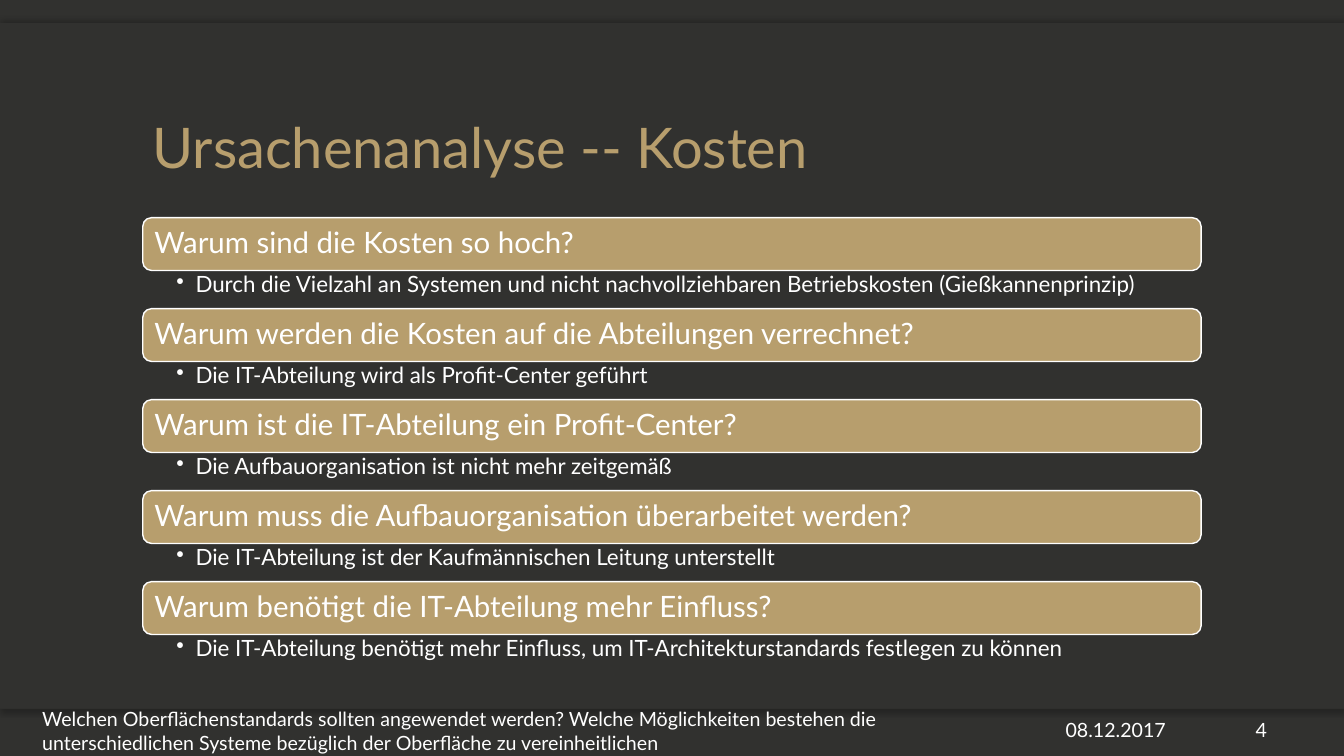
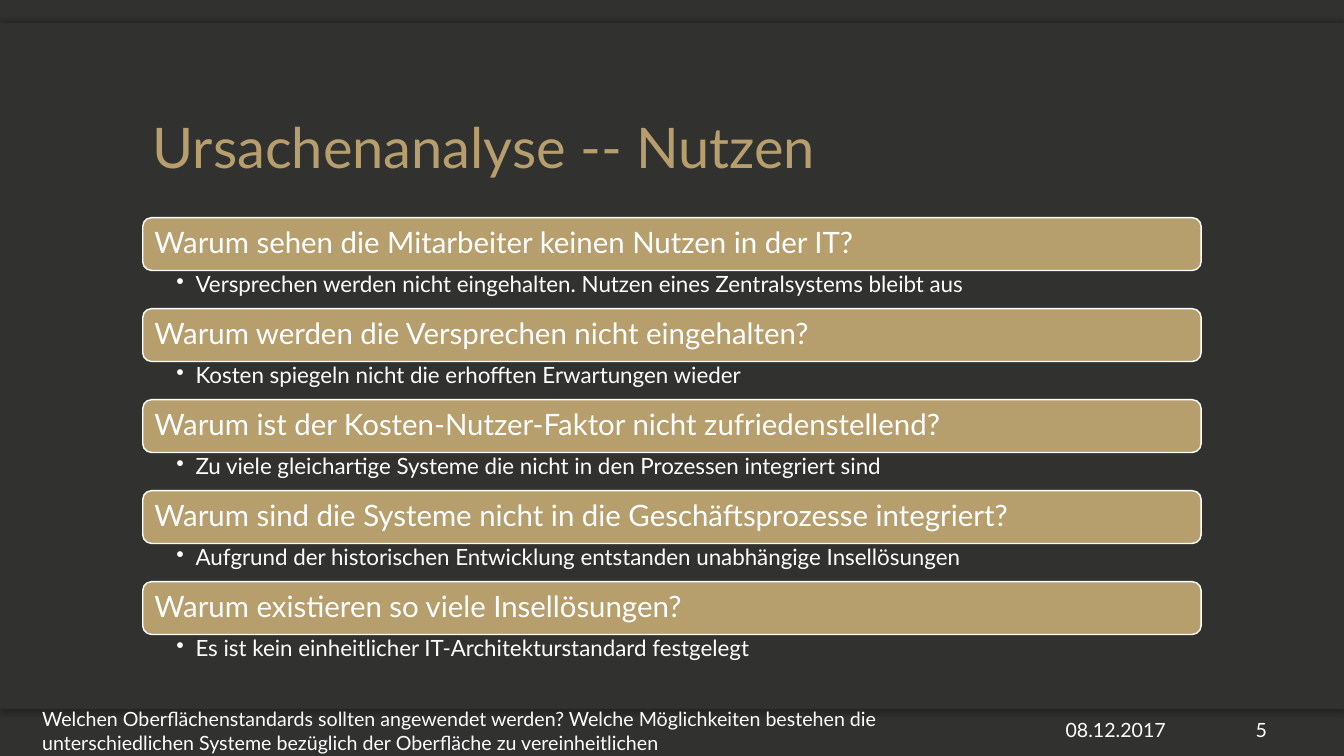
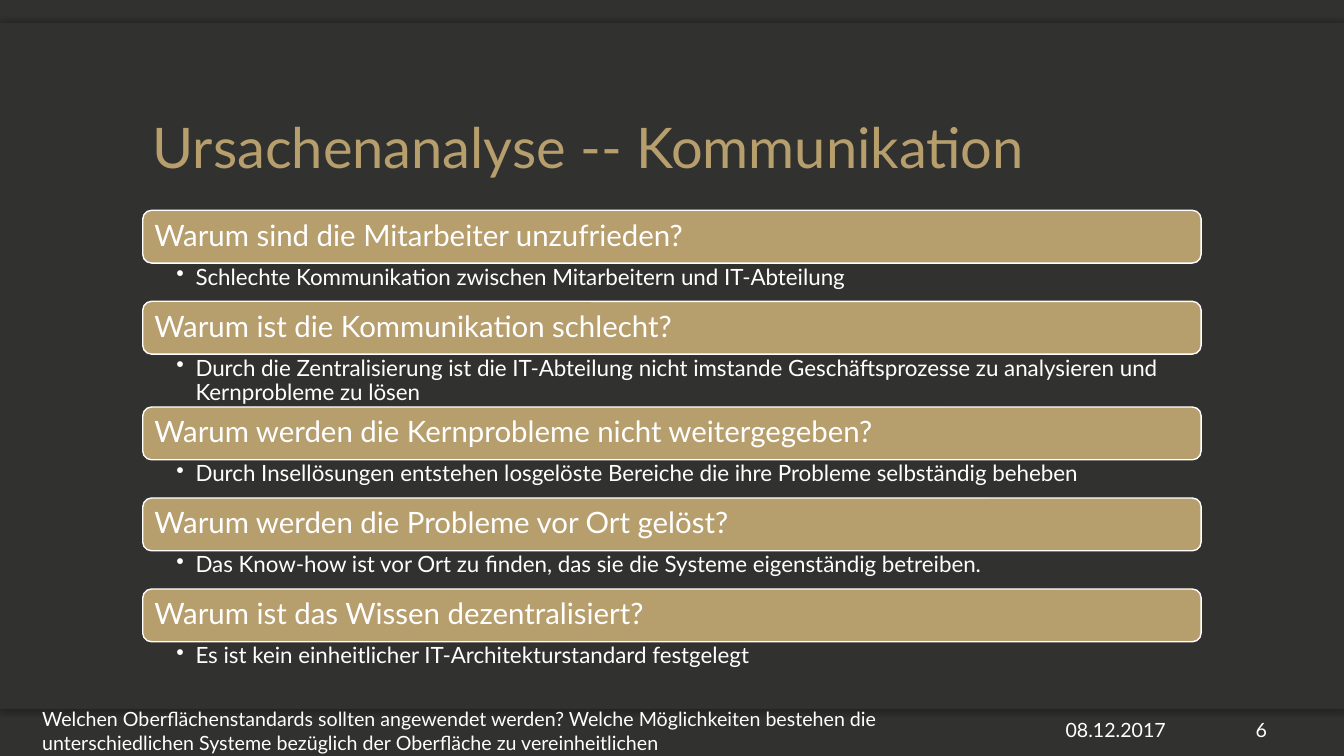
from lxml.etree import SubElement
from pptx import Presentation
from pptx.dml.color import RGBColor
from pptx.enum.shapes import MSO_SHAPE as SHAPE
from pptx.enum.text import MSO_ANCHOR as ANCHOR, PP_ALIGN as ALIGN
from pptx.oxml.ns import qn
from pptx.util import Pt

DARK, GOLD, WHITE = "31312F", "B79E6D", "FFFFFF"
FONT = "Lato"
WIDTH, HEIGHT = 960, 540
LEFT, CONTENT_W = 102, 756
LIST_MIDDLE = 318
QUESTION_H, ANSWER_H, TALL_ANSWER_H = 37.7, 27.3, 37.8
BULLET_INDENT = 13.7
DATE = "08.12.2017"
FOOTER = ("Welchen Oberflächenstandards sollten angewendet werden? Welche Möglichkeiten "
          "bestehen die unterschiedlichen Systeme bezüglich der Oberfläche zu vereinheitlichen")

SLIDES = [
    (4, "Ursachenanalyse -- Kosten", [
        ("Warum sind die Kosten so hoch?",
         "Durch die Vielzahl an Systemen und nicht nachvollziehbaren Betriebskosten (Gießkannenprinzip)"),
        ("Warum werden die Kosten auf die Abteilungen verrechnet?",
         "Die IT-Abteilung wird als Profit-Center geführt"),
        ("Warum ist die IT-Abteilung ein Profit-Center?",
         "Die Aufbauorganisation ist nicht mehr zeitgemäß"),
        ("Warum muss die Aufbauorganisation überarbeitet werden?",
         "Die IT-Abteilung ist der Kaufmännischen Leitung unterstellt"),
        ("Warum benötigt die IT-Abteilung mehr Einfluss?",
         "Die IT-Abteilung benötigt mehr Einfluss, um IT-Architekturstandards festlegen zu können"),
    ]),
    (5, "Ursachenanalyse -- Nutzen", [
        ("Warum sehen die Mitarbeiter keinen Nutzen in der IT?",
         "Versprechen werden nicht eingehalten. Nutzen eines Zentralsystems bleibt aus"),
        ("Warum werden die Versprechen nicht eingehalten?",
         "Kosten spiegeln nicht die erhofften Erwartungen wieder"),
        ("Warum ist der Kosten-Nutzer-Faktor nicht zufriedenstellend?",
         "Zu viele gleichartige Systeme die nicht in den Prozessen integriert sind"),
        ("Warum sind die Systeme nicht in die Geschäftsprozesse integriert?",
         "Aufgrund der historischen Entwicklung entstanden unabhängige Insellösungen"),
        ("Warum existieren so viele Insellösungen?",
         "Es ist kein einheitlicher IT-Architekturstandard festgelegt"),
    ]),
    (6, "Ursachenanalyse -- Kommunikation", [
        ("Warum sind die Mitarbeiter unzufrieden?",
         "Schlechte Kommunikation zwischen Mitarbeitern und IT-Abteilung"),
        ("Warum ist die Kommunikation schlecht?",
         "Durch die Zentralisierung ist die IT-Abteilung nicht imstande Geschäftsprozesse "
         "zu analysieren und Kernprobleme zu lösen"),
        ("Warum werden die Kernprobleme nicht weitergegeben?",
         "Durch Insellösungen entstehen losgelöste Bereiche die ihre Probleme selbständig beheben"),
        ("Warum werden die Probleme vor Ort gelöst?",
         "Das Know-how ist vor Ort zu finden, das sie die Systeme eigenständig betreiben."),
        ("Warum ist das Wissen dezentralisiert?",
         "Es ist kein einheitlicher IT-Architekturstandard festgelegt"),
    ]),
]


def rgb(value):
    return RGBColor.from_string(value)


def add_box(s, kind, x, y, w, h, fill, line=None):
    sp = s.shapes.add_shape(kind, Pt(x), Pt(y), Pt(w), Pt(h))
    sp.shadow.inherit = False
    sp.fill.solid()
    sp.fill.fore_color.rgb = rgb(fill)
    if line:
        sp.line.color.rgb = rgb(line)
        sp.line.width = Pt(1)
    else:
        sp.line.fill.background()
    return sp


def add_shadow(sp, degrees):
    effects = sp._element.spPr.find(qn("a:effectLst"))
    shadow = SubElement(effects, qn("a:outerShdw"), blurRad=str(Pt(4)), dist=str(Pt(2)),
                        dir=str(degrees * 60000), algn="ctr", rotWithShape="0")
    color = SubElement(shadow, qn("a:srgbClr"), val="000000")
    SubElement(color, qn("a:alpha"), val="25000")


def add_bullet(p):
    pPr = p._p.get_or_add_pPr()
    pPr.set("marL", str(Pt(BULLET_INDENT)))
    pPr.set("indent", str(-Pt(BULLET_INDENT)))
    SubElement(pPr, qn("a:buChar"), char="•")


def write(sp, text, size=14, color=WHITE, align=ALIGN.LEFT, anchor=ANCHOR.MIDDLE,
          insets=(7.2, 3.6, 7.2, 3.6), spacing=None, bullet=False):
    tf = sp.text_frame
    tf.word_wrap = True
    tf.vertical_anchor = anchor
    tf.margin_left, tf.margin_top, tf.margin_right, tf.margin_bottom = map(Pt, insets)
    p = tf.paragraphs[0]
    if bullet:
        add_bullet(p)
    p.alignment = align
    if spacing:
        p.line_spacing = spacing
    r = p.add_run()
    r.text = text
    r.font.name = FONT
    r.font.size = Pt(size)
    r.font.color.rgb = rgb(color)


def add_text(s, text, x, y, w, h, **style):
    write(s.shapes.add_textbox(Pt(x), Pt(y), Pt(w), Pt(h)), text, **style)


def add_panel(s, y, h, edge_h=35):
    for edge_y, degrees in ((y + h - edge_h, 90), (y, 270)):
        add_shadow(add_box(s, SHAPE.RECTANGLE, 0, edge_y, WIDTH, edge_h, DARK), degrees)
    add_box(s, SHAPE.RECTANGLE, 0, y, WIDTH, h, DARK)


def add_footer(s, number, y, h):
    add_text(s, DATE, 735, y + 6.5, 105, 21.6, align=ALIGN.RIGHT)
    add_text(s, FOOTER, 23, y, 657, h)
    add_text(s, str(number), 858, y + 6.5, 54, 21.6, align=ALIGN.RIGHT)


def add_questions(s, pairs, x, middle, w):
    heights = [TALL_ANSWER_H if len(answer) > 100 else ANSWER_H for _, answer in pairs]
    y = middle - (len(pairs) * QUESTION_H + sum(heights)) / 2
    for (question, answer), h in zip(pairs, heights):
        bar = add_box(s, SHAPE.ROUNDED_RECTANGLE, x, y, w, QUESTION_H, GOLD, WHITE)
        write(bar, question, size=21, insets=(6.5,) * 4, spacing=0.9)
        y += QUESTION_H
        add_text(s, answer, x, y, w, h, size=16, anchor=ANCHOR.TOP,
                 insets=(24, 1.9, 11.5, 1.9), spacing=0.9, bullet=True)
        y += h


def add_analysis_slide(prs, number, title, pairs):
    s = prs.slides.add_slide(prs.slide_layouts[6])
    s.background.fill.solid()
    s.background.fill.fore_color.rgb = rgb(DARK)
    add_panel(s, 16.6, 489.6)
    add_text(s, title, LEFT, 33, CONTENT_W, 99.5, size=40, color=GOLD,
             anchor=ANCHOR.BOTTOM, spacing=0.9)
    add_footer(s, number, 504, 36)
    add_questions(s, pairs, LEFT, LIST_MIDDLE, CONTENT_W)


def main():
    prs = Presentation()
    prs.slide_width, prs.slide_height = Pt(WIDTH), Pt(HEIGHT)
    for number, title, pairs in SLIDES:
        add_analysis_slide(prs, number, title, pairs)
    prs.save("out.pptx")


if __name__ == "__main__":
    main()
